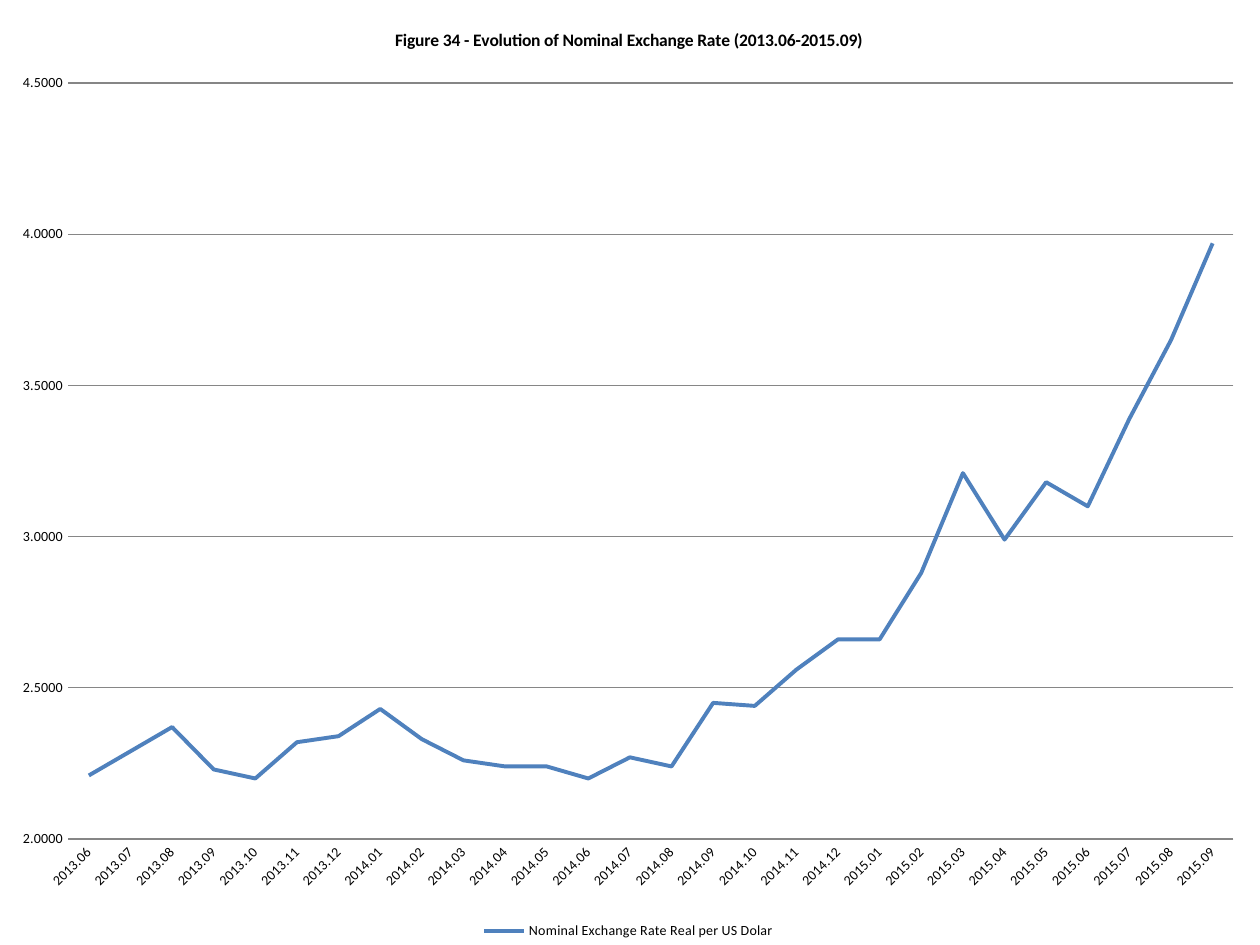
from dataclasses import dataclass
from typing import Any

from lxml import etree
from pptx import Presentation
from pptx.chart.data import CategoryChartData
from pptx.dml.color import RGBColor
from pptx.enum.chart import XL_CHART_TYPE as ChartType
from pptx.enum.chart import XL_LEGEND_POSITION as LegendPosition
from pptx.enum.chart import XL_TICK_MARK as TickMark
from pptx.oxml.ns import qn
from pptx.util import Inches, Pt

BLACK = RGBColor(0x00, 0x00, 0x00)
GRAY = RGBColor(0x86, 0x86, 0x86)
BLUE = RGBColor(0x4F, 0x81, 0xBD)

TITLE = "Figure 34 - Evolution of Nominal Exchange Rate (2013.06-2015.09)"
SERIES_NAME = "Nominal Exchange Rate Real per US Dolar"
RATE_FORMAT = "#,##0.0000"
RATES = [
    2.21, 2.29, 2.37, 2.23, 2.20, 2.32, 2.34,
    2.43, 2.33, 2.26, 2.24, 2.24, 2.20, 2.27, 2.24, 2.45, 2.44, 2.56, 2.66,
    2.66, 2.88, 3.21, 2.99, 3.18, 3.10, 3.39, 3.65, 3.97,
]
# Months run on from June 2013 (month index 5)
MONTHS = [f"{2013 + m // 12}.{m % 12 + 1:02d}" for m in range(5, 5 + len(RATES))]


@dataclass
class SlideBuilder:
    slide: Any
    font_name: str = "Calibri"
    title_size: int = 10
    label_size: int = 8

    def style_font(self, font, size, bold=False):
        font.name = self.font_name
        font.size = Pt(size)
        font.bold = bold
        font.color.rgb = BLACK

    def add_line_chart(self, left, top, width, height):
        data = CategoryChartData(number_format=RATE_FORMAT)
        data.categories = MONTHS
        data.add_series(SERIES_NAME, RATES)
        chart = self.slide.shapes.add_chart(
            ChartType.LINE, left, top, width, height, data
        ).chart
        self.style_font(chart.font, self.title_size)
        chart.plots[0].vary_by_categories = False

        series = chart.plots[0].series[0]
        series.smooth = False
        series.format.line.color.rgb = BLUE
        series.format.line.width = Pt(2.25)
        return chart

    def set_title(self, chart, text):
        chart.has_title = True
        frame = chart.chart_title.text_frame
        frame.text = text
        self.style_font(frame.paragraphs[0].runs[0].font, self.title_size, bold=True)
        chart.chart_title.include_in_layout = False

    def set_legend(self, chart):
        chart.has_legend = True
        chart.legend.position = LegendPosition.BOTTOM
        chart.legend.include_in_layout = False
        self.style_font(chart.legend.font, self.label_size)

    def style_axes(self, chart):
        for axis in (chart.category_axis, chart.value_axis):
            axis.major_tick_mark = TickMark.NONE
            axis.minor_tick_mark = TickMark.NONE
            self.style_font(axis.tick_labels.font, self.label_size)

        months = chart.category_axis
        months.format.line.color.rgb = GRAY
        months.format.line.width = Pt(0.75)
        # Slanted month labels
        body = months._element.find(qn("c:txPr")).find(qn("a:bodyPr"))
        body.set("rot", str(-45 * 60000))
        body.set("vert", "horz")

        rates = chart.value_axis
        rates.minimum_scale, rates.maximum_scale, rates.major_unit = 2, 4.5, 0.5
        rates.format.line.fill.background()
        rates.has_major_gridlines = True
        rates.major_gridlines.format.line.color.rgb = GRAY
        rates.major_gridlines.format.line.width = Pt(0.75)
        rates.tick_labels.number_format = RATE_FORMAT
        rates.tick_labels.number_format_is_linked = False

    def place_plot(self, chart, x, y, w, h):
        """Fix the inner plot area, in fractions of the chart."""
        plot_area = chart.plots[0]._element.getparent()
        layout = plot_area.find(qn("c:layout"))
        if layout is None:
            layout = etree.Element(qn("c:layout"))
            plot_area.insert(0, layout)
        manual = etree.SubElement(layout, qn("c:manualLayout"))
        settings = {"layoutTarget": "inner", "xMode": "edge", "yMode": "edge",
                    "x": x, "y": y, "w": w, "h": h}
        for tag, value in settings.items():
            etree.SubElement(manual, qn(f"c:{tag}")).set("val", str(value))


def main():
    deck = Presentation()
    deck.slide_width, deck.slide_height = Inches(10), Inches(7.5)
    page = SlideBuilder(deck.slides.add_slide(deck.slide_layouts[6]))

    # Exchange rate chart filling the slide
    chart = page.add_line_chart(Inches(-0.01), Inches(0), Inches(10), Inches(7.5))
    page.set_title(chart, TITLE)
    page.set_legend(chart)
    page.style_axes(chart)
    page.place_plot(chart, x=0.055, y=0.088, w=0.925, h=0.8)

    deck.save("out.pptx")


if __name__ == "__main__":
    main()
